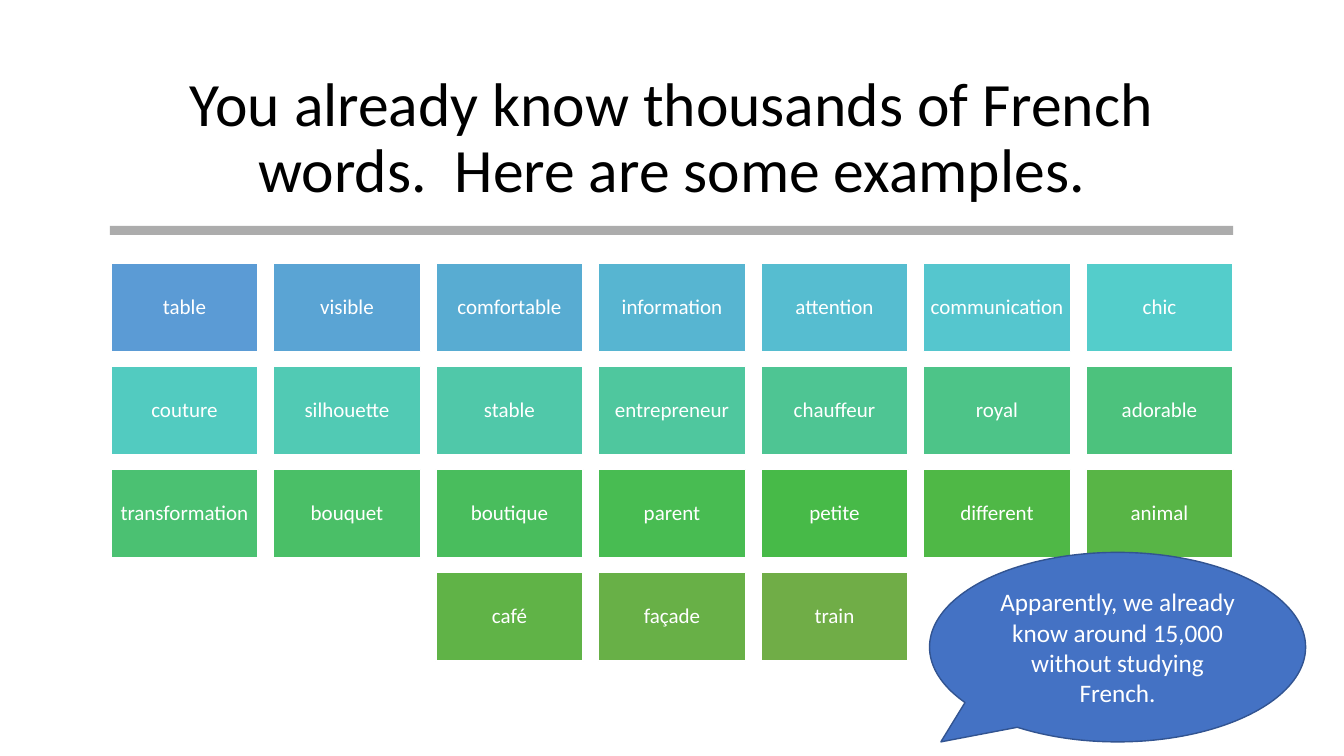
import colorsys
from dataclasses import dataclass

from lxml import etree
from pptx import Presentation
from pptx import util as u
from pptx.dml import color
from pptx.enum import shapes, text
from pptx.oxml import ns


@dataclass(frozen=True)
class Theme:
    font: str = "Calibri"
    title_ink: str = "000000"
    light_ink: str = "FFFFFF"
    rule: str = "808080"
    rule_opacity: int = 65
    first_tile: str = "5B9BD5"
    last_tile: str = "70AD47"
    tile_edge: str = "FFFFFF"
    callout: str = "4472C4"
    callout_edge: str = "325491"
    title_size: int = 44
    tile_size: int = 15
    callout_size: int = 18


def apply(target, values):
    for name, value in values.items():
        setattr(target, name, value)


def rgb(value):
    return color.RGBColor.from_string(value)


def blend(first, last, share):
    start, end = (
        colorsys.rgb_to_hls(*(part / 255 for part in rgb(value)))
        for value in (first, last)
    )
    mixed = colorsys.hls_to_rgb(*(a + (b - a) * share for a, b in zip(start, end)))
    return "".join(f"{round(part * 255):02X}" for part in mixed)


class WordSlide:
    def __init__(self, deck, theme):
        self.theme = theme
        self.slide = deck.slides.add_slide(deck.slide_layouts[5])

    def label(self, holder, words, size, ink, spacing=1.0, inset=None):
        frame = holder.text_frame
        frame.text = words
        apply(frame, {
            "word_wrap": True,
            "auto_size": text.MSO_AUTO_SIZE.NONE,
            "vertical_anchor": text.MSO_ANCHOR.MIDDLE,
        })
        if inset is not None:
            sides = ("left", "top", "right", "bottom")
            apply(frame, {f"margin_{side}": u.Inches(inset) for side in sides})
        paragraph = frame.paragraphs[0]
        apply(paragraph, {"alignment": text.PP_ALIGN.CENTER, "line_spacing": spacing})
        font = paragraph.runs[0].font
        apply(font, {"name": self.theme.font, "size": u.Pt(size), "bold": False})
        font.color.rgb = rgb(ink)

    def title(self, words, box):
        heading = self.slide.shapes.title
        apply(heading, dict(zip(("left", "top", "width", "height"), map(u.Inches, box))))
        self.label(heading, words, self.theme.title_size, self.theme.title_ink, 0.9)

    def block(self, kind, box, fill, edge=None):
        block = self.slide.shapes.add_shape(kind, *map(u.Inches, box))
        block.shadow.inherit = False
        block.fill.solid()
        block.fill.fore_color.rgb = rgb(fill)
        if edge:
            block.line.color.rgb = rgb(edge)
            block.line.width = u.Pt(1)
        else:
            block.line.fill.background()
        return block

    def rule(self, box):
        rule = self.block(shapes.MSO_SHAPE.RECTANGLE, box, self.theme.rule)
        tint = rule.element.spPr.find(ns.qn("a:solidFill")).find(ns.qn("a:srgbClr"))
        opacity = etree.SubElement(tint, ns.qn("a:alpha"))
        opacity.set("val", str(self.theme.rule_opacity * 1000))

    def tile(self, word, box, fill):
        tile = self.block(shapes.MSO_SHAPE.RECTANGLE, box, fill, self.theme.tile_edge)
        self.label(tile, word, self.theme.tile_size, self.theme.light_ink, 0.9, 0.06)

    def word_grid(self, words, columns, box, tile_width, tile_height):
        left, top, width, height = box
        rows = [words[i:i + columns] for i in range(0, len(words), columns)]
        across = (width - tile_width) / (columns - 1)
        down = (height - tile_height) / (len(rows) - 1)
        for row, row_words in enumerate(rows):
            indent = (columns - len(row_words)) / 2
            for column, word in enumerate(row_words):
                share = (row * columns + column) / (len(words) - 1)
                fill = blend(self.theme.first_tile, self.theme.last_tile, share)
                x = left + (indent + column) * across
                self.tile(word, (x, top + row * down, tile_width, tile_height), fill)

    def callout(self, words, box, tip):
        bubble = self.block(shapes.MSO_SHAPE.OVAL_CALLOUT, box,
                            self.theme.callout, self.theme.callout_edge)
        for index, offset in enumerate(tip):
            bubble.adjustments[index] = offset
        self.label(bubble, words, self.theme.callout_size, self.theme.light_ink)


FRENCH_WORDS = (
    "table visible comfortable information attention communication chic "
    "couture silhouette stable entrepreneur chauffeur royal adorable "
    "transformation bouquet boutique parent petite different animal "
    "café façade train"
).split()


def main():
    deck = Presentation()
    apply(deck, {"slide_width": u.Inches(13.33), "slide_height": u.Inches(7.5)})
    page = WordSlide(deck, Theme())
    page.title("You already know thousands of French words.  Here are some examples.",
               (0.95, 0.66, 11.43, 1.45))
    page.rule((1.09, 2.24, 11.14, 0.09))
    page.word_grid(FRENCH_WORDS, 7, (1.1, 2.61, 11.13, 3.95), 1.46, 0.88)
    page.callout("Apparently, we already know around 15,000 without studying French.",
                 (9.22, 5.48, 3.73, 1.88), (-0.47, 0.5))
    deck.save("out.pptx")


if __name__ == "__main__":
    main()
